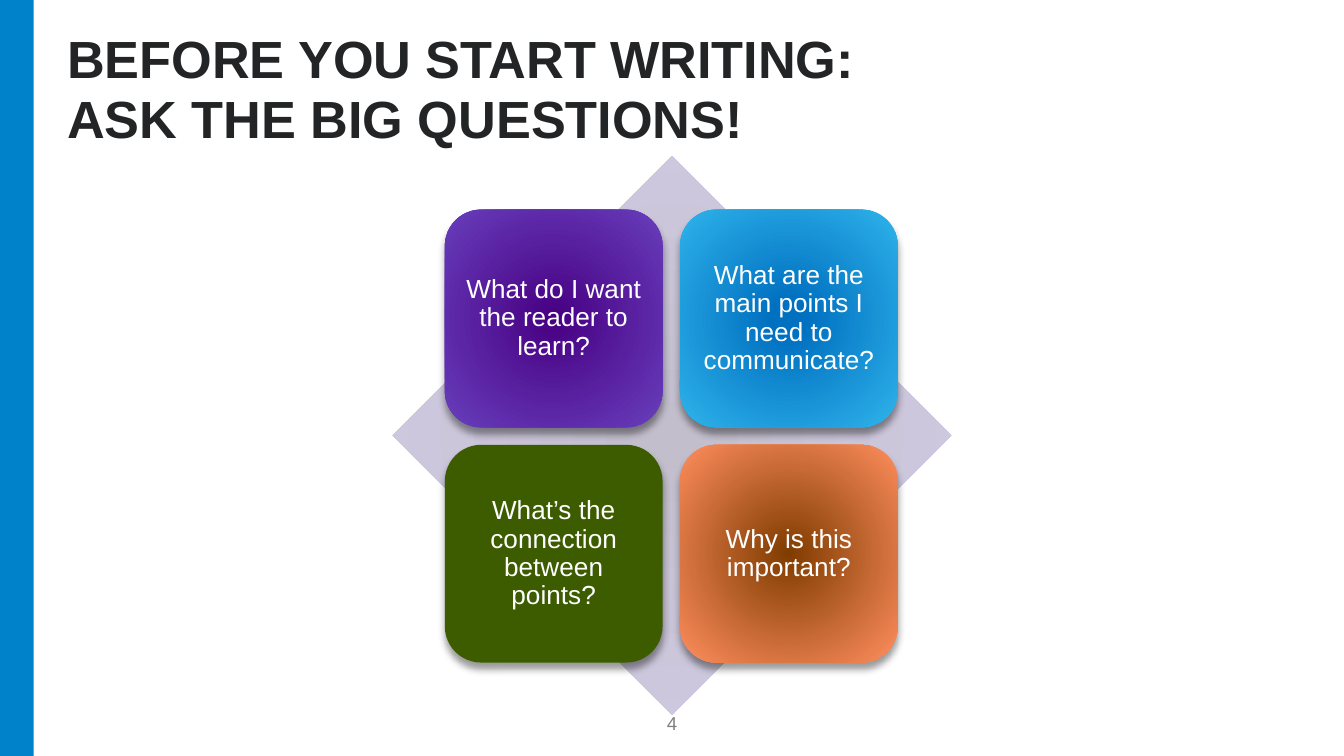
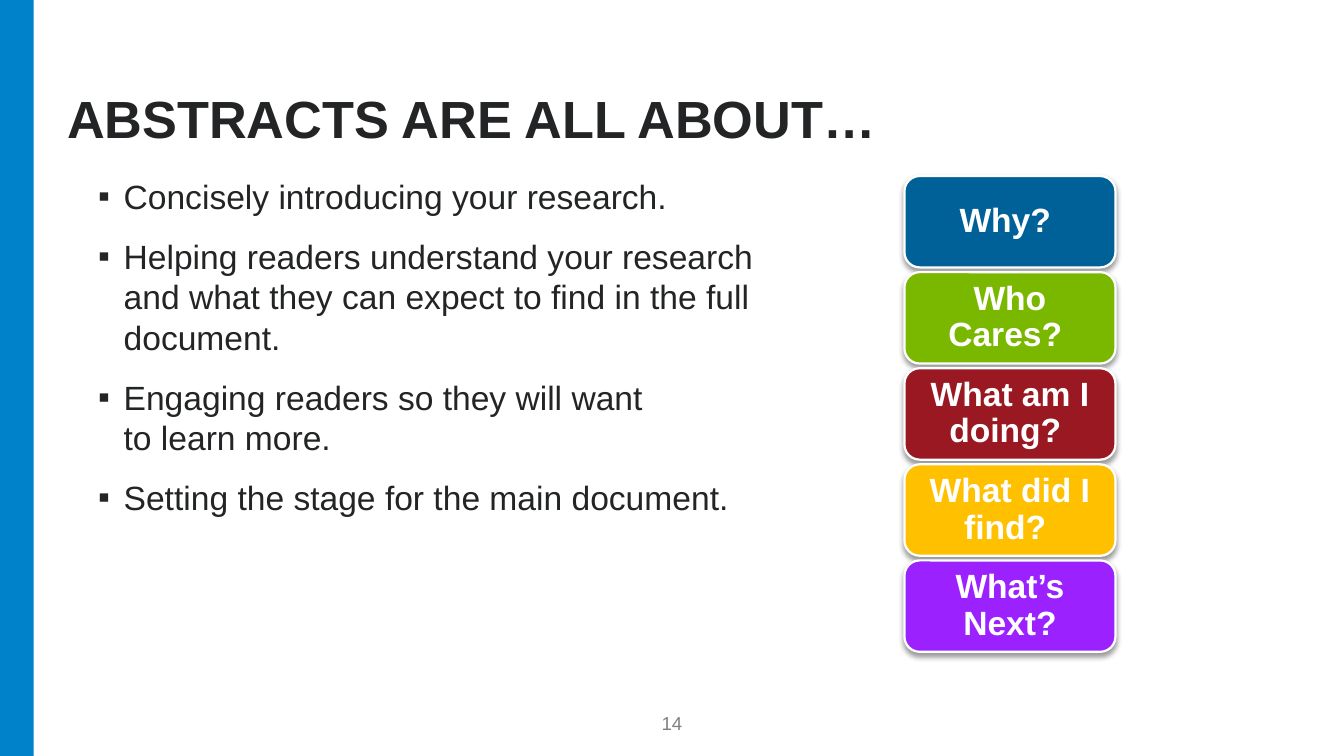
from copy import deepcopy

from lxml import etree
from pptx import Presentation
from pptx.dml.color import RGBColor
from pptx.enum.shapes import MSO_SHAPE
from pptx.enum.text import MSO_ANCHOR, MSO_AUTO_SIZE, PP_ALIGN
from pptx.oxml import parse_xml
from pptx.oxml.ns import nsdecls, qn
from pptx.util import Inches, Pt

RECT, DIAMOND, ROUNDED = MSO_SHAPE.RECTANGLE, MSO_SHAPE.DIAMOND, MSO_SHAPE.ROUNDED_RECTANGLE
TOP, MIDDLE, BOTTOM = MSO_ANCHOR.TOP, MSO_ANCHOR.MIDDLE, MSO_ANCHOR.BOTTOM
LEFT, CENTER = PP_ALIGN.LEFT, PP_ALIGN.CENTER
NO_AUTOFIT = MSO_AUTO_SIZE.NONE

FONT = "Arial"
WHITE = RGBColor(0xFF, 0xFF, 0xFF)
INK = RGBColor(0x23, 0x24, 0x25)
GRAY = RGBColor(0x80, 0x80, 0x80)
BAND_BLUE = RGBColor(0x00, 0x82, 0xCA)
DIAMOND_IN = RGBColor(0xC2, 0xBE, 0xCC)
DIAMOND_OUT = RGBColor(0xD2, 0xCC, 0xE5)
PURPLE_IN = RGBColor(0x48, 0x00, 0x82)
PURPLE_OUT = RGBColor(0x67, 0x3E, 0xBC)
BLUE_IN = RGBColor(0x00, 0x70, 0xC0)
BLUE_OUT = RGBColor(0x2F, 0xB3, 0xEB)
DARK_GREEN = RGBColor(0x3D, 0x5C, 0x00)
BROWN = RGBColor(0x80, 0x3C, 0x00)
ORANGE = RGBColor(0xFF, 0x8E, 0x5E)
NAVY = RGBColor(0x00, 0x61, 0x98)
GREEN = RGBColor(0x7A, 0xB8, 0x00)
RED = RGBColor(0x9A, 0x18, 0x21)
YELLOW = RGBColor(0xFF, 0xC0, 0x00)
VIOLET = RGBColor(0x9B, 0x21, 0xFF)

STYLES = {
    "title": dict(size=28, bold=True, color=INK, align=LEFT, anchor=TOP,
                  margins=(0, 0, 0, 0), spacing=0.95),
    "body": dict(size=18, bold=False, color=INK, align=LEFT, anchor=TOP,
                 margins=(0.23, 0, 0, 0.04), spacing=1.0),
    "number": dict(size=10, bold=False, color=GRAY, align=CENTER, anchor=BOTTOM,
                   margins=(0, 0.05, 0, 0), spacing=1.0),
    "card": dict(size=14, bold=False, color=WHITE, align=CENTER, anchor=MIDDLE,
                 margins=(0.06, 0.06, 0.06, 0.06), spacing=0.9),
    "step": dict(size=18, bold=True, color=WHITE, align=CENTER, anchor=MIDDLE,
                 margins=(0.07, 0.04, 0.07, 0.04), spacing=0.9),
}


def write(sp, lines, style):
    st = STYLES[style]
    tf = sp.text_frame
    sides = ("margin_left", "margin_top", "margin_right", "margin_bottom")
    frame = dict(word_wrap=True, auto_size=NO_AUTOFIT, vertical_anchor=st["anchor"])
    frame.update(zip(sides, map(Inches, st["margins"])))
    for name, value in frame.items():
        setattr(tf, name, value)
    for i, line in enumerate(lines):
        p = tf.paragraphs[0] if i == 0 else tf.add_paragraph()
        p.text = line
        p.alignment, p.line_spacing = st["align"], st["spacing"]
        if style == "body":
            p.space_before, p.space_after = Pt(6 if i else 0), Pt(4.5)
            pPr = p._p.get_or_add_pPr()
            pPr.set("marL", str(Inches(0.19)))
            pPr.set("indent", str(-Inches(0.19)))
            etree.SubElement(pPr, qn("a:buFont")).set("typeface", FONT)
            etree.SubElement(pPr, qn("a:buChar")).set("char", "▪")
        for r in p.runs:
            for name, value in dict(name=FONT, size=Pt(st["size"]), bold=st["bold"]).items():
                setattr(r.font, name, value)
            r.font.color.rgb = st["color"]
        # A line break takes its height from its own run properties
        for br in p._p.findall(qn("a:br")):
            br.append(deepcopy(p.runs[0]._r.rPr))


def add_block(s, kind, box, colors, first_stop=0, shadow=None):
    """Add a shape filled with one colour or a two-colour radial gradient; shadow is (blur, distance) in points."""
    sp = s.shapes.add_shape(kind, *map(Inches, box))
    sp.line.fill.background()
    sp.shadow.inherit = False
    spPr = sp._element.spPr
    if len(colors) == 1:
        sp.fill.solid()
        sp.fill.fore_color.rgb = colors[0]
    else:
        sp.fill.gradient()
        for stop, color, position in zip(sp.fill.gradient_stops, colors, (first_stop, 1)):
            stop.color.rgb, stop.position = color, position
        grad = spPr.find(qn("a:gradFill"))
        grad.replace(grad.find(qn("a:lin")), parse_xml(
            f'<a:path {nsdecls("a")} path="circle">'
            '<a:fillToRect l="100000" t="100000" r="100000" b="100000"/></a:path>'))
    if shadow:
        blur, dist = map(Pt, shadow)
        spPr.find(qn("a:effectLst")).append(parse_xml(
            f'<a:outerShdw {nsdecls("a")} blurRad="{blur}" dist="{dist}" dir="5400000" rotWithShape="0">'
            '<a:srgbClr val="000000"><a:alpha val="40000"/></a:srgbClr></a:outerShdw>'))
    return sp


prs = Presentation()
prs.slide_width, prs.slide_height = Inches(10), Inches(5.625)

# Shared frame: band, slide number and title
slides = []
for layout, number, title in [
    (5, "4", "BEFORE YOU START WRITING:\vASK THE BIG QUESTIONS!"),
    (1, "14", "\vABSTRACTS ARE ALL ABOUT…"),
]:
    s = prs.slides.add_slide(prs.slide_layouts[layout])
    add_block(s, RECT, (0, 0, 0.25, 5.625), [BAND_BLUE])
    box = s.shapes.add_textbox(Inches(4.75), Inches(5.31), Inches(0.5), Inches(0.15))
    write(box, [number], "number")
    sp = s.shapes.title
    sp.left, sp.top, sp.width, sp.height = map(Inches, (0.5, 0.23, 9, 0.94))
    write(sp, [title], "title")
    slides.append(s)
questions, abstracts = slides

# Four questions on a diamond
add_block(questions, DIAMOND, (2.92, 1.16, 4.16, 4.16), [DIAMOND_IN, DIAMOND_OUT])
cards = [
    ("What do I want the reader to learn?", [PURPLE_IN, PURPLE_OUT], 0),
    ("What are the main points I need to communicate?", [BLUE_IN, BLUE_OUT], 0.1),
    ("What’s the connection between points?", [DARK_GREEN], 0),
    ("Why is this important?", [BROWN, ORANGE], 0),
]
for i, (text, colors, first_stop) in enumerate(cards):
    row, col = divmod(i, 2)
    box = (3.31 + 1.75 * col, 1.56 + 1.75 * row, 1.62, 1.62)
    sp = add_block(questions, ROUNDED, box, colors, first_stop, shadow=(4, 3.4))
    write(sp, [text], "card")

# Bulleted list
sp = abstracts.placeholders[1]
sp.left, sp.top, sp.width, sp.height = map(Inches, (0.5, 1.31, 5.21, 3.88))
write(sp, [
    "Concisely introducing your research.",
    "Helping readers understand your research and what they can expect to find in the full document.",
    "Engaging readers so they will want\vto learn more.",
    "Setting the stage for the main document.",
], "body")

# Stack of abstract steps
steps = [("Why? ", NAVY), ("Who Cares? ", GREEN), ("What am I doing? ", RED),
         ("What did I find? ", YELLOW), ("What’s Next?", VIOLET)]
for i, (text, color) in enumerate(steps):
    sp = add_block(abstracts, ROUNDED, (6.73, 1.31 + 0.715 * i, 1.57, 0.68), [color], shadow=(3, 2))
    sp.line.color.rgb = WHITE
    sp.line.width = Pt(1.2)
    write(sp, [text], "step")

prs.save("out.pptx")
